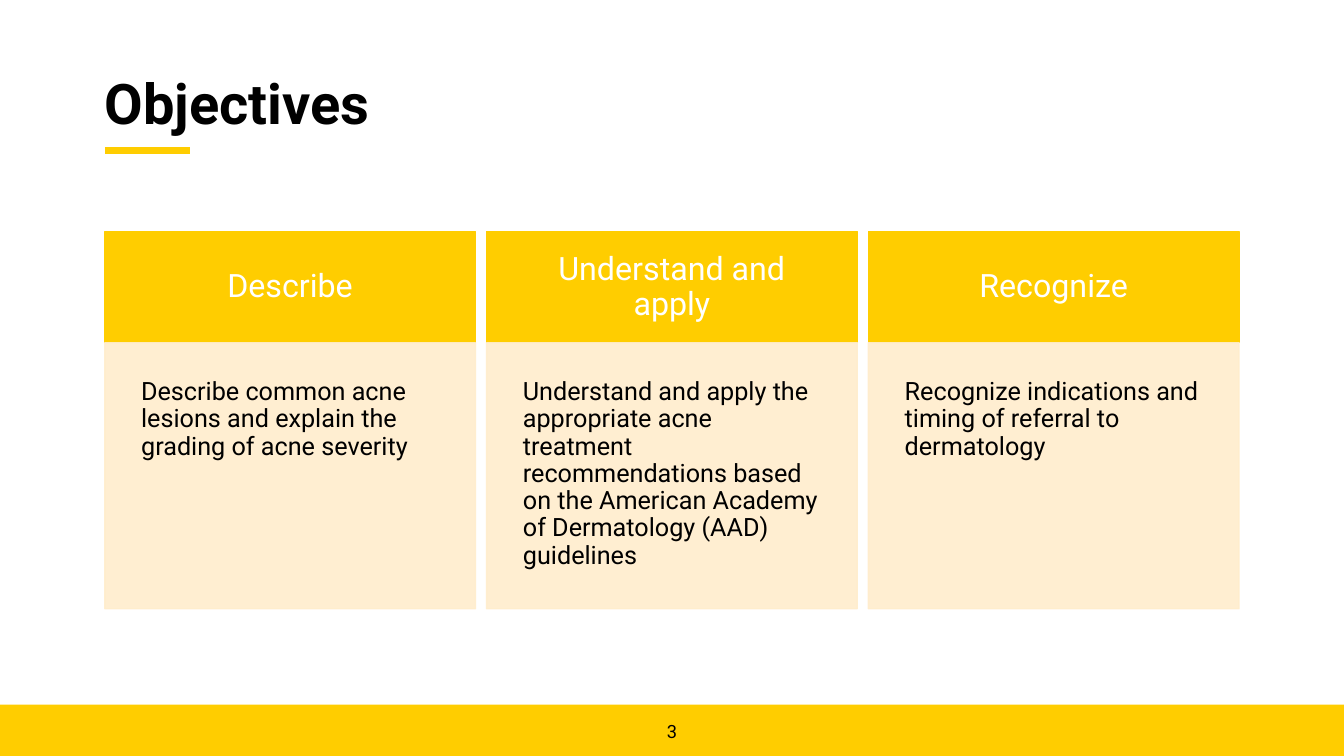
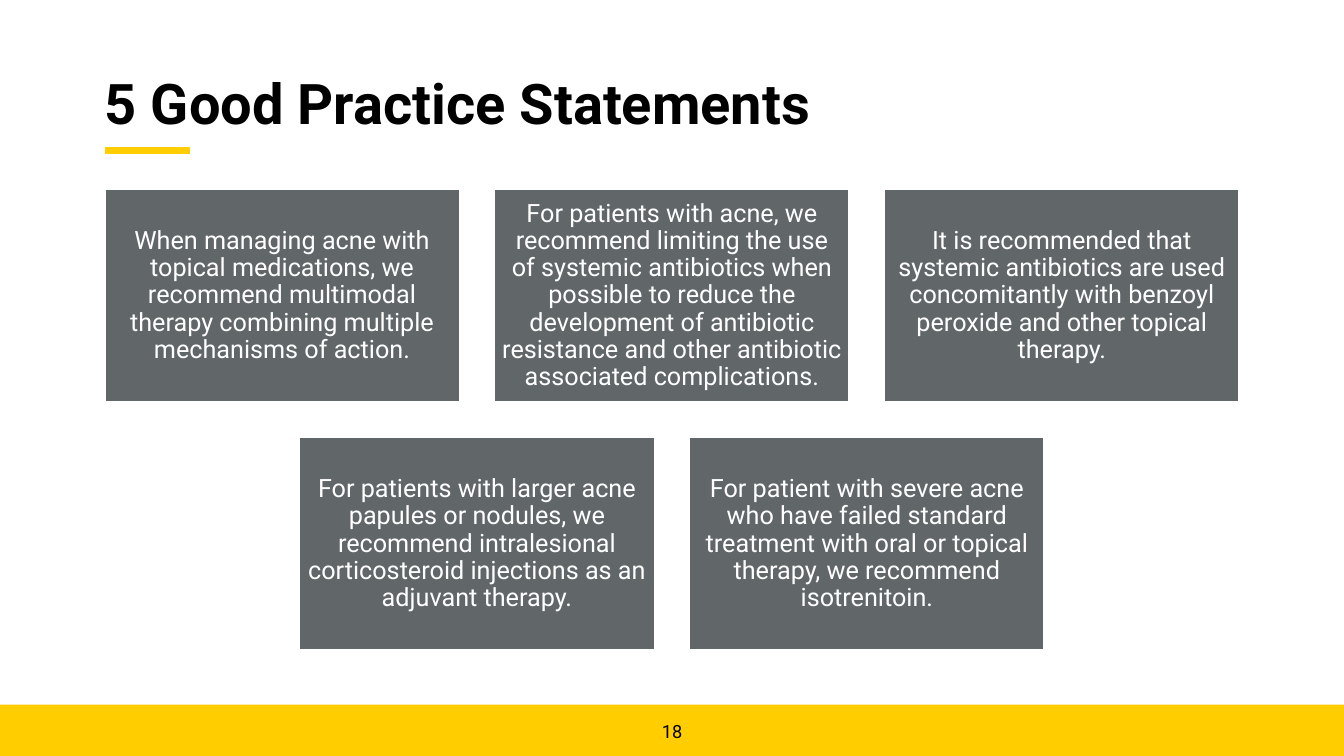
"""Build two acne guideline slides: objectives and good practice statements."""
from dataclasses import dataclass

from lxml import etree
from pptx import Presentation, util as u
from pptx.dml.color import RGBColor
from pptx.enum import shapes, text
from pptx.oxml.ns import qn

OBJECTIVES = [
    ("Describe", "Describe common acne lesions and explain the grading of acne severity"),
    ("Understand and apply",
     "Understand and apply the appropriate acne treatment recommendations based on "
     "the American Academy of Dermatology (AAD) guidelines"),
    ("Recognize", "Recognize indications and timing of referral to dermatology"),
]
STATEMENTS = [
    "When managing acne with topical medications, we recommend multimodal therapy "
    "combining multiple mechanisms of action.",
    "For patients with acne, we recommend limiting the use of systemic antibiotics when "
    "possible to reduce the development of antibiotic resistance and other antibiotic "
    "associated complications.",
    "It is recommended that systemic antibiotics are used concomitantly with benzoyl "
    "peroxide and other topical therapy.",
    "For patients with larger acne papules or nodules, we recommend intralesional "
    "corticosteroid injections as an adjuvant therapy.",
    "For patient with severe acne who have failed standard treatment with oral or topical "
    "therapy, we recommend isotrenitoin.",
]


@dataclass(frozen=True)
class Theme:
    """Colours, type sizes and page measures used on every slide."""
    font: str = "Roboto"
    gold: str = "FFCD00"
    cream: str = "FFEDCC"
    slate: str = "616669"
    white: str = "FFFFFF"
    black: str = "000000"
    title: int = 40
    heading: int = 23
    body: int = 18
    number: int = 13
    width: float = 13.33
    height: float = 7.5
    left: float = 1.04
    content: float = 11.25
    band: float = 0.51
    columns: int = 3


THEME = Theme()


def write(box, words, size, color, inset=0.0, bold=False, centered=True, middle=True, spacing=0.9):
    """Put one styled paragraph in a box."""
    frame = box.text_frame
    frame.word_wrap = True
    frame.margin_left = frame.margin_right = u.Inches(inset)
    frame.margin_top = frame.margin_bottom = u.Inches(inset)
    frame.vertical_anchor = text.MSO_ANCHOR.MIDDLE if middle else text.MSO_ANCHOR.TOP
    para = frame.paragraphs[0]
    para.text = words
    para.alignment = text.PP_ALIGN.CENTER if centered else text.PP_ALIGN.LEFT
    para.line_spacing = spacing
    para.font.name = THEME.font
    para.font.size = u.Pt(size)
    para.font.bold = bold
    para.font.color.rgb = RGBColor.from_string(color)


def add_panel(page, area, fill, line=None, opacity=100):
    """Add a flat rectangle, with a thin outline if a line colour is given."""
    panel = page.shapes.add_shape(shapes.MSO_SHAPE.RECTANGLE, *map(u.Inches, area))
    panel.shadow.inherit = False
    panel.fill.solid()
    panel.fill.fore_color.rgb = RGBColor.from_string(fill)
    if line:
        panel.line.color.rgb = RGBColor.from_string(line)
        panel.line.width = u.Pt(1)
    else:
        panel.line.fill.background()
    if opacity < 100:
        for color in panel.element.spPr.iter(qn("a:srgbClr")):
            etree.SubElement(color, qn("a:alpha"), val=str(opacity * 1000))
    return panel


def add_page(deck, title, number):
    """Add a slide with the shared title, accent line, band and page number."""
    page = deck.slides.add_slide(deck.slide_layouts[6])
    add_panel(page, (0, THEME.height - THEME.band, THEME.width, THEME.band), THEME.gold)
    ends = (THEME.left, 1.49, THEME.left + 0.84, 1.49)
    accent = page.shapes.add_connector(shapes.MSO_CONNECTOR.STRAIGHT, *map(u.Inches, ends))
    accent.line.color.rgb = RGBColor.from_string(THEME.gold)
    accent.line.width = u.Pt(5)
    etree.SubElement(accent.element.spPr, qn("a:effectLst"))
    number_box = page.shapes.add_textbox(*map(u.Inches, (6.34, 7.15, 0.65, 0.26)))
    write(number_box, str(number), THEME.number, THEME.black, middle=False, spacing=1.0)
    title_box = page.shapes.add_textbox(*map(u.Inches, (THEME.left, 0.58, THEME.content, 0.95)))
    write(title_box, title, THEME.title, THEME.black, bold=True, centered=False)
    return page


def column_size(gap_share):
    """Return the column width and gap, the gap being a share of the width."""
    width = THEME.content / (THEME.columns + (THEME.columns - 1) * gap_share)
    return width, width * gap_share


def add_objectives(page, top=2.3, head=1.1, body=2.64):
    """Draw one headed card for each objective."""
    width, gap = column_size(0.03)
    for index, (heading, detail) in enumerate(OBJECTIVES):
        left = THEME.left + index * (width + gap)
        header = add_panel(page, (left, top, width, head), THEME.gold, THEME.gold)
        write(header, heading, THEME.heading, THEME.white, inset=0.29)
        card = add_panel(page, (left, top + head, width, body), THEME.cream, THEME.cream, 90)
        write(card, detail, THEME.body, THEME.black, inset=0.36, centered=False, middle=False)


def add_statements(page, top=1.88):
    """Draw the statements in centred rows."""
    width, gap = column_size(0.1)
    height = width * 0.6
    for index, statement in enumerate(STATEMENTS):
        row, column = divmod(index, THEME.columns)
        in_row = min(THEME.columns, len(STATEMENTS) - row * THEME.columns)
        indent = (THEME.columns - in_row) * (width + gap) / 2
        area = (THEME.left + indent + column * (width + gap), top + row * (height + gap), width, height)
        tile = add_panel(page, area, THEME.slate, THEME.white)
        write(tile, statement, THEME.body, THEME.white, inset=0.07)


def main():
    """Build and save the deck."""
    deck = Presentation()
    deck.slide_width = u.Inches(THEME.width)
    deck.slide_height = u.Inches(THEME.height)
    add_objectives(add_page(deck, "Objectives", 3))
    add_statements(add_page(deck, "5 Good Practice Statements", 18))
    deck.save("out.pptx")


if __name__ == "__main__":
    main()
